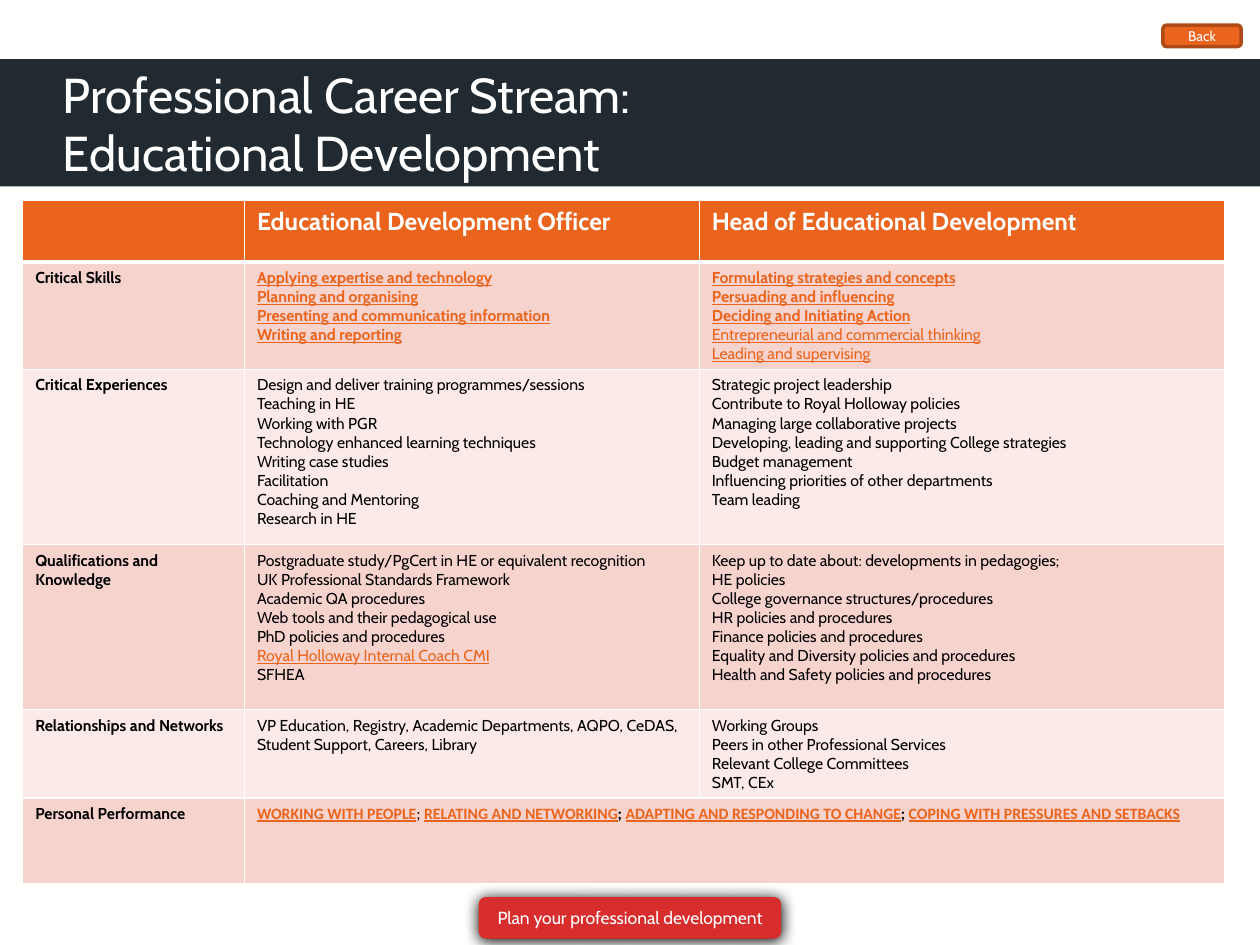
from lxml.etree import SubElement as Sub
from pptx import Presentation
from pptx.dml.color import RGBColor as RGB
from pptx.enum.shapes import MSO_SHAPE as SHAPE
from pptx.enum.text import MSO_ANCHOR as ANCHOR, PP_ALIGN as ALIGN
from pptx.oxml import parse_xml
from pptx.oxml.ns import nsdecls, qn
from pptx.util import Inches, Pt

HUE = {"page": "FFFFFE", "navy": "202A30", "orange": "EB641E", "rust": "AE4A16",
       "red": "D72D2D", "rose": "F7D3CD", "blush": "FBEAE8",
       "white": "FFFFFF", "black": "000000"}

# size, colour, then font attributes
LOOK = {
    "title": (28, "white", {"name": "Cabin"}),
    "head": (14, "white", {"name": "Cabin", "bold": True}),
    "label": (9, "black", {"name": "Cabin", "bold": True}),
    "body": (9, "black", {"name": "Cabin", "bold": False}),
    "link": (9, "orange", {"name": "Cabin", "bold": False, "underline": True}),
    "skill": (9, "orange", {"name": "Cabin", "bold": True, "underline": True}),
    "trait": (9, "orange", {"name": "Calibri", "bold": True, "underline": True}),
    "thin": (9, "black", {"name": "Calibri", "bold": False}),
    "sep": (9, "black", {"name": "Calibri", "bold": True}),
    "back": (8, "white", {"name": "Cabin"}),
    "plan": (10, "white", {"name": "Cabin"}),
}


def lines(look, text):
    """Turn each line of text into a paragraph of one run."""
    return [[(look, line)] for line in text.split("\n")]


def write(frame, paras, align=ALIGN.LEFT):
    frame.word_wrap = True
    for i, runs in enumerate(paras):
        para = frame.paragraphs[0] if i == 0 else frame.add_paragraph()
        para.alignment = align
        for look, text in runs:
            run = para.add_run()
            run.text = text
            size, hue, attrs = LOOK[look]
            run.font.size = Pt(size)
            run.font.color.rgb = RGB.from_string(HUE[hue])
            for key, val in attrs.items():
                setattr(run.font, key, val)


deck = Presentation()
deck.slide_width, deck.slide_height = Inches(10), Inches(7.5)
U = deck.slide_width // 100  # the grid: 100 columns by 75 rows
slide = deck.slides.add_slide(deck.slide_layouts[6])
slide.background.fill.solid()
slide.background.fill.fore_color.rgb = RGB.from_string(HUE["page"])

# Title band
band = slide.shapes.add_shape(SHAPE.RECTANGLE, 0, int(4.7 * U), 100 * U, int(10.1 * U))
band.shadow.inherit = False
band.fill.solid()
band.fill.fore_color.rgb = RGB.from_string(HUE["navy"])
band.line.fill.background()

title = slide.shapes.add_textbox(5 * U, int(4.7 * U), 90 * U, int(10.1 * U)).text_frame
title.vertical_anchor = ANCHOR.MIDDLE
for side in ("left", "right", "top", "bottom"):
    setattr(title, "margin_" + side, 0)
write(title, lines("title", "Professional Career Stream:\nEducational Development"))

# Table
ROWS = [
    [[], lines("head", "Educational Development Officer"),
     lines("head", "Head of Educational Development")],
    [lines("label", "Critical Skills"),
     lines("skill", """Applying expertise and technology
Planning and organising
Presenting and communicating information
Writing and reporting"""),
     lines("skill", """Formulating strategies and concepts
Persuading and influencing
Deciding and Initiating Action""")
     + lines("link", "Entrepreneurial and commercial thinking\nLeading and supervising")],
    [lines("label", "Critical Experiences"),
     lines("body", """Design and deliver training programmes/sessions
Teaching in HE
Working with PGR
Technology enhanced learning techniques
Writing case studies
Facilitation
Coaching and Mentoring
Research in HE"""),
     lines("body", """Strategic project leadership
Contribute to Royal Holloway policies
Managing large collaborative projects
Developing, leading and supporting College strategies
Budget management
Influencing priorities of other departments
Team leading""")],
    [lines("label", "Qualifications and Knowledge"),
     lines("body", """Postgraduate study/PgCert in HE or equivalent recognition
UK Professional Standards Framework
Academic QA procedures
Web tools and their pedagogical use
PhD policies and procedures""")
     + lines("link", "Royal Holloway Internal Coach CMI") + lines("body", "SFHEA"),
     lines("body", """Keep up to date about: developments in pedagogies;
HE policies
College governance structures/procedures
HR policies and procedures
Finance policies and procedures
Equality and Diversity policies and procedures
Health and Safety policies and procedures""")],
    [lines("label", "Relationships and Networks"),
     lines("body", "VP Education, Registry, Academic Departments, AQPO, CeDAS, "
                   "Student Support, Careers, Library"),
     lines("body", """Working Groups
Peers in other Professional Services
Relevant College Committees
SMT, CEx""")],
    [lines("label", "Personal Performance"),
     [[("trait", "WORKING WITH PEOPLE"), ("thin", "; "),
       ("trait", "RELATING AND NETWORKING"), ("sep", "; "),
       ("trait", "ADAPTING AND RESPONDING TO CHANGE"), ("sep", "; "),
       ("trait", "COPING WITH PRESSURES AND SETBACKS")]], []],
]
WIDE = [17.6, 36.1, 41.7]
HIGH = [4.9, 8.5, 13.9, 13.1, 7, 6.8]

grid = slide.shapes.add_table(len(HIGH), len(WIDE), int(1.8 * U), int(15.9 * U),
                              int(sum(WIDE) * U), int(sum(HIGH) * U)).table
for col, wide in zip(grid.columns, WIDE):
    col.width = int(wide * U)
for r, (row, high) in enumerate(zip(ROWS, HIGH)):
    grid.rows[r].height = int(high * U)
    tint = "orange" if r == 0 else ("blush", "rose")[r % 2]
    for c, paras in enumerate(row):
        cell = grid.cell(r, c)
        props = cell._tc.get_or_add_tcPr()
        for side in "LRTB":
            thick = 3 if (r, side) in ((0, "B"), (1, "T")) else 1
            edge = Sub(props, qn("a:ln" + side), w=str(Pt(thick)))
            Sub(Sub(edge, qn("a:solidFill")), qn("a:srgbClr"), val=HUE["white"])
        cell.fill.solid()
        cell.fill.fore_color.rgb = RGB.from_string(HUE[tint])
        write(cell.text_frame, paras)
grid.cell(5, 1).merge(grid.cell(5, 2))

# Buttons
for look, text, box, tint, rim in [
    ("back", "Back", (92.3, 2, 6.2, 1.7), "orange", "rust"),
    ("plan", "Plan your professional development", (38, 71.2, 24, 3.3), "red", None),
]:
    key = slide.shapes.add_shape(SHAPE.ROUNDED_RECTANGLE, *(int(n * U) for n in box))
    key.shadow.inherit = False
    key.fill.solid()
    key.fill.fore_color.rgb = RGB.from_string(HUE[tint])
    if rim:
        key.line.color.rgb = RGB.from_string(HUE[rim])
        key.line.width = Pt(2)
    else:
        key.line.fill.background()
        glow = parse_xml(
            f'<a:outerShdw {nsdecls("a")} blurRad="{Pt(8.5)}" dist="{Pt(1)}" '
            f'dir="5400000" rotWithShape="0"><a:srgbClr val="{HUE["black"]}"/></a:outerShdw>')
        key._element.spPr.find(qn("a:effectLst")).append(glow)
    key.text_frame.vertical_anchor = ANCHOR.MIDDLE
    write(key.text_frame, lines(look, text), ALIGN.CENTER)

deck.save("out.pptx")
